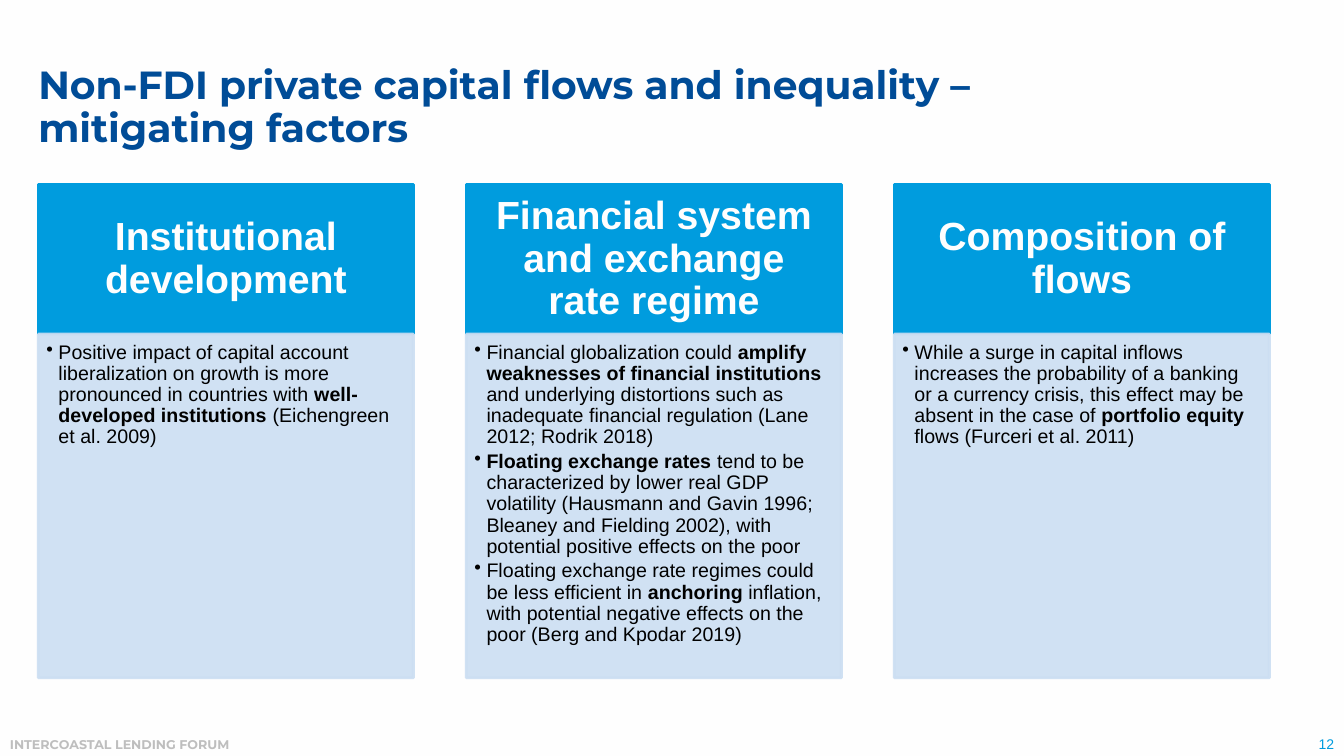
"""Build the slide on factors that mitigate the link between capital flows and inequality."""
from lxml import etree
from pptx import Presentation
from pptx import util as u
from pptx.dml.color import RGBColor
from pptx.enum import shapes, text
from pptx.oxml.ns import qn

NAVY = RGBColor(0x00, 0x4C, 0x97)
SKY = RGBColor(0x00, 0x9C, 0xDE)
PALE = RGBColor(0xCC, 0xDE, 0xF2)
GREY = RGBColor(0xBE, 0xBE, 0xBE)
PAPER = RGBColor(0xFE, 0xFE, 0xFE)
BLACK = RGBColor(0x00, 0x00, 0x00)

TITLE = ["Non-FDI private capital flows and inequality –", "mitigating factors"]
FOOTER = "INTERCOASTAL LENDING FORUM"
PAGE = "12"

# Runs in each bullet alternate between regular and bold.
FACTORS = [
    ("Institutional development", [
        ("Positive impact of capital account liberalization on growth is more pronounced "
         "in countries with ", "well-developed institutions", " (Eichengreen et al. 2009)"),
    ]),
    ("Financial system and exchange rate regime", [
        ("Financial globalization could ", "amplify weaknesses of financial institutions ",
         "and underlying distortions such as inadequate financial regulation "
         "(Lane 2012; Rodrik 2018)"),
        ("", "Floating exchange rates ",
         "tend to be characterized by lower real GDP volatility (Hausmann and Gavin 1996; "
         "Bleaney and Fielding 2002), with potential positive effects on the poor"),
        ("Floating exchange rate regimes could be less efficient in ", "anchoring",
         " inflation, with potential negative effects on the poor (Berg and Kpodar 2019)"),
    ]),
    ("Composition of flows", [
        ("While a surge in capital inflows increases the probability of a banking or a "
         "currency crisis, this effect may be absent in the case of ", "portfolio equity ",
         "flows (Furceri et al. 2011)"),
    ]),
]

WIDTH, HEIGHT = 13.33, 7.5
LEFT, TOP = 0.38, 1.83
COLUMN, PITCH = 3.72, 4.245
HEAD, BODY = 1.485, 3.41

TITLE_FONT = dict(name="Montserrat", size=u.Pt(28), bold=True, color=NAVY)
FOOTER_FONT = dict(name="Montserrat", size=u.Pt(9), bold=True, color=GREY)
PAGE_FONT = dict(name="Arial", size=u.Pt(10), bold=False, color=SKY)
HEAD_FONT = dict(name="Arial", size=u.Pt(28), bold=True, color=PAPER)
BODY_FONT = dict(name="Arial", size=u.Pt(14), bold=False, color=BLACK)


def set_frame(shape, anchor, insets):
    frame = shape.text_frame
    sides = ("margin_left", "margin_top", "margin_right", "margin_bottom")
    values = dict(zip(sides, map(u.Inches, insets)), word_wrap=True, vertical_anchor=anchor)
    for name, value in values.items():
        setattr(frame, name, value)
    return frame


def add_run(paragraph, words, **font):
    run = paragraph.add_run()
    run.text = words
    run.font.color.rgb = font.pop("color")
    for name, value in font.items():
        setattr(run.font, name, value)


def add_label(slide, place, lines, font, anchor, insets, **layout):
    box = slide.shapes.add_textbox(*map(u.Inches, place))
    paragraph = set_frame(box, anchor, insets).paragraphs[0]
    for name, value in layout.items():
        setattr(paragraph, name, value)
    for index, line in enumerate(lines):
        if index:
            paragraph.add_line_break()
        add_run(paragraph, line, **font)


def add_panel(slide, place, color, opacity=100):
    panel = slide.shapes.add_shape(shapes.MSO_SHAPE.RECTANGLE, *map(u.Inches, place))
    panel.shadow.inherit = False
    panel.line.width = u.Pt(2)
    for fill in (panel.fill, panel.line.fill):
        fill.solid()
        fill.fore_color.rgb = color
    if opacity < 100:
        for tint in panel.element.spPr.iter(qn("a:srgbClr")):
            etree.SubElement(tint, qn("a:alpha"), val=str(opacity * 1000))
    return panel


def add_bullet(paragraph, runs):
    paragraph.alignment = text.PP_ALIGN.LEFT
    paragraph.line_spacing = 0.9
    paragraph.space_after = u.Pt(2.4)
    properties = paragraph._p.get_or_add_pPr()
    properties.set("marL", str(u.Inches(0.12)))
    properties.set("indent", str(-u.Inches(0.12)))
    etree.SubElement(properties, qn("a:buChar"), char="•")
    for index, words in enumerate(runs):
        if words:
            add_run(paragraph, words, **{**BODY_FONT, "bold": index % 2 == 1})


def add_factor(slide, left, heading, bullets):
    head = add_panel(slide, (left, TOP, COLUMN, HEAD), SKY)
    frame = set_frame(head, text.MSO_ANCHOR.MIDDLE, (0.22, 0.12, 0.22, 0.12))
    paragraph = frame.paragraphs[0]
    paragraph.alignment = text.PP_ALIGN.CENTER
    paragraph.line_spacing = 0.9
    add_run(paragraph, heading, **HEAD_FONT)

    body = add_panel(slide, (left, TOP + HEAD, COLUMN, BODY), PALE, 90)
    frame = set_frame(body, text.MSO_ANCHOR.TOP, (0.08, 0.08, 0.11, 0.12))
    for index, runs in enumerate(bullets):
        add_bullet(frame.add_paragraph() if index else frame.paragraphs[0], runs)


def main():
    presentation = Presentation()
    presentation.slide_width = u.Inches(WIDTH)
    presentation.slide_height = u.Inches(HEIGHT)
    slide = presentation.slides.add_slide(presentation.slide_layouts[6])
    slide.background.fill.solid()
    slide.background.fill.fore_color.rgb = PAPER

    margins = (0.1, 0.05, 0.1, 0.05)
    add_label(slide, (0, 7.26, 10, 0.25), [FOOTER], FOOTER_FONT,
              text.MSO_ANCHOR.TOP, margins)
    add_label(slide, (WIDTH - 1.32, 7.24, 1.32, 0.27), [PAGE], PAGE_FONT,
              text.MSO_ANCHOR.BOTTOM, margins, alignment=text.PP_ALIGN.RIGHT)
    add_label(slide, (LEFT, 0.54, 11.83, 1.07), TITLE, TITLE_FONT,
              text.MSO_ANCHOR.MIDDLE, (0, 0, 0, 0), line_spacing=0.9)
    for index, (heading, bullets) in enumerate(FACTORS):
        add_factor(slide, LEFT + index * PITCH, heading, bullets)
    presentation.save("out.pptx")


if __name__ == "__main__":
    main()
